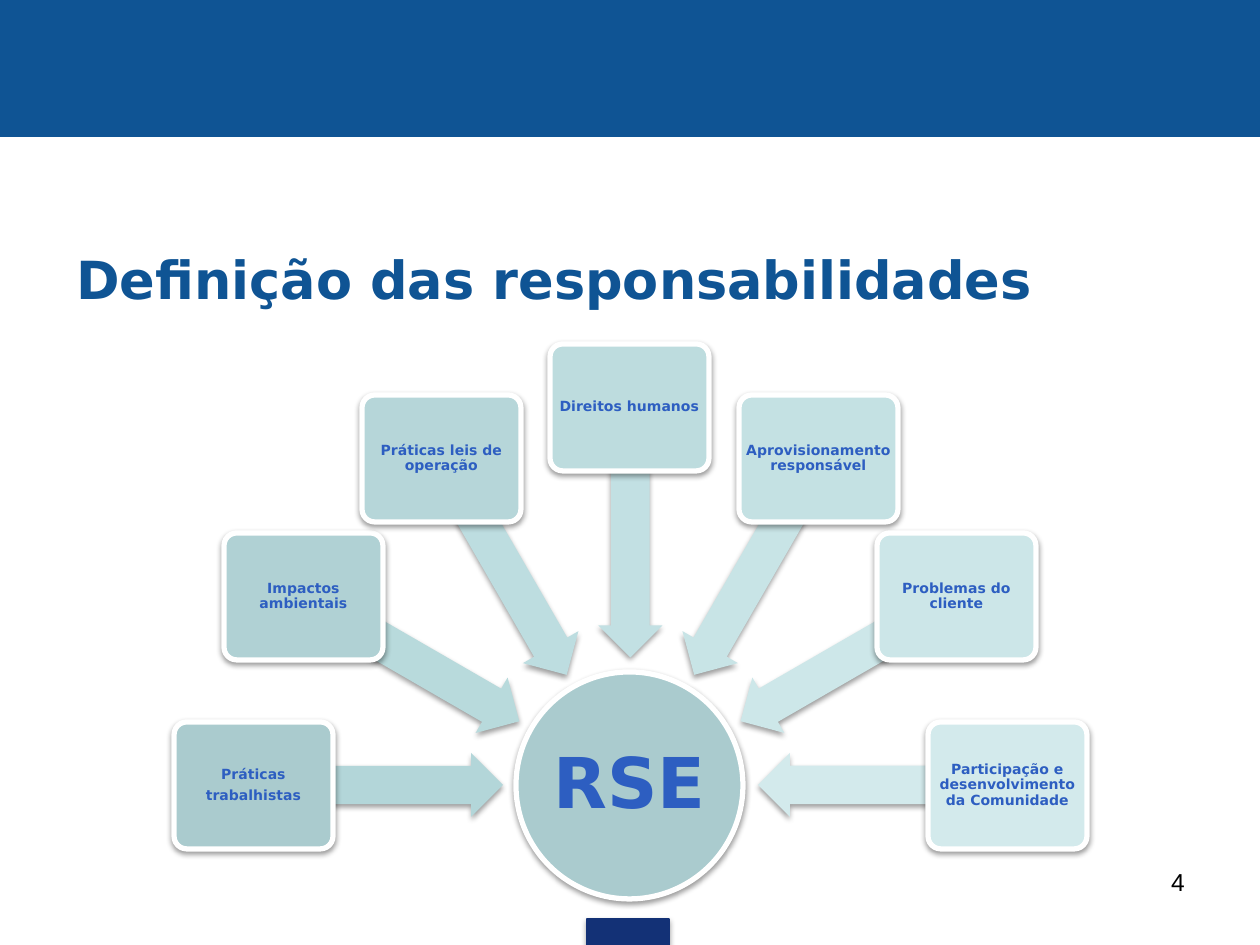
import math

from lxml import etree
from pptx import Presentation
from pptx.dml.color import RGBColor
from pptx.enum.shapes import MSO_SHAPE
from pptx.enum.text import MSO_ANCHOR, PP_ALIGN
from pptx.oxml.ns import qn
from pptx.util import Emu, Pt

PX = 914400 // 126
RECT, OVAL = MSO_SHAPE.RECTANGLE, MSO_SHAPE.OVAL
ROUND, ARROW = MSO_SHAPE.ROUNDED_RECTANGLE, MSO_SHAPE.LEFT_ARROW
TOP, MIDDLE = MSO_ANCHOR.TOP, MSO_ANCHOR.MIDDLE
LEFT, CENTER, RIGHT = PP_ALIGN.LEFT, PP_ALIGN.CENTER, PP_ALIGN.RIGHT

COLORS = {
    "band": "0F5494",
    "mark": "133176",
    "label": "2D5EC1",
    "hub": "AACBCE",
    "white": "FFFFFF",
    "black": "000000",
}

# Label, box colour, arrow colour: clockwise from the left
DUTIES = [
    ("Práticas\ntrabalhistas", "AACBCE", "B3D6D9"),
    ("Impactos ambientais", "B0D1D4", "B8DADC"),
    ("Práticas leis de operação", "B6D6D9", "BDDDE0"),
    ("Direitos humanos", "BDDCDE", "C2E0E3"),
    ("Aprovisionamento responsável", "C4E1E3", "C8E4E6"),
    ("Problemas do cliente", "CCE6E8", "CDE7E9"),
    ("Participação e desenvolvimento da Comunidade", "D3EAEC", "D3EAEC"),
]

HUB_X, HUB_Y, HUB_SIZE = 630, 785, 227
BOX_W, BOX_H, BOX_RADIUS = 159, 127, 377
ARROW_W, ARROW_H, ARROW_RADIUS = 249, 64, 252


def px(n):
    return Emu(round(n) * PX)


def rgb(value):
    return RGBColor.from_string(COLORS.get(value, value))


def add_shadow(s, alpha, dist):
    effects = s._element.spPr.find(qn("a:effectLst"))
    shadow = etree.SubElement(
        effects, qn("a:outerShdw"), blurRad="40000", dist=str(dist),
        dir="5400000", rotWithShape="0")
    color = etree.SubElement(shadow, qn("a:srgbClr"), val=COLORS["black"])
    etree.SubElement(color, qn("a:alpha"), val=str(alpha * 1000))


def add_shape(slide, kind, x, y, w, h, fill, line=None, width=0.75):
    s = slide.shapes.add_shape(kind, px(x), px(y), px(w), px(h))
    s.shadow.inherit = False
    s.fill.solid()
    s.fill.fore_color.rgb = rgb(fill)
    if line:
        s.line.color.rgb = rgb(line)
        s.line.width = Pt(width)
    else:
        s.line.fill.background()
    return s


def add_centered(slide, kind, cx, cy, w, h, fill, line=None):
    s = add_shape(slide, kind, cx - w / 2, cy - h / 2, w, h, fill, line, 3)
    add_shadow(s, 38, 20000)
    return s


def set_text(s, text, size, color, font="DejaVu Sans", bold=True,
             align=CENTER, anchor=MIDDLE, inset=None, spacing=None, after=0):
    tf = s.text_frame
    tf.word_wrap = True
    tf.vertical_anchor = anchor
    if inset is not None:
        tf.margin_left = tf.margin_right = px(inset)
        tf.margin_top = tf.margin_bottom = px(inset)
    for i, line in enumerate(text.split("\n")):
        p = tf.add_paragraph() if i else tf.paragraphs[0]
        p.alignment = align
        p.space_after = Pt(after)
        if spacing:
            p.line_spacing = spacing
        r = p.add_run()
        r.text = line
        r.font.name = font
        r.font.size = Pt(size)
        r.font.bold = bold
        r.font.color.rgb = rgb(color)


def add_text(slide, x, y, w, h, text, **fmt):
    s = slide.shapes.add_textbox(px(x), px(y), px(w), px(h))
    set_text(s, text, **fmt)


def around_hub(angle, radius):
    a = math.radians(angle)
    return HUB_X - radius * math.cos(a), HUB_Y - radius * math.sin(a)


def add_duty(slide, angle, label, box_color, arrow_color):
    arrow = add_centered(slide, ARROW, *around_hub(angle, ARROW_RADIUS),
                         ARROW_W, ARROW_H, arrow_color)
    arrow.adjustments[0] = 0.6
    arrow.adjustments[1] = 0.5
    arrow.rotation = (180 + angle) % 360
    box = add_centered(slide, ROUND, *around_hub(angle, BOX_RADIUS),
                       BOX_W, BOX_H, box_color, "white")
    box.adjustments[0] = 0.1
    set_text(box, label, size=8, color="label", inset=3, spacing=0.9, after=3)


def main():
    prs = Presentation()
    prs.slide_width, prs.slide_height = px(1260), px(945)
    slide = prs.slides.add_slide(prs.slide_layouts[6])

    # Top band and bottom mark
    add_shape(slide, RECT, 0, 0, 1260, 136, "band", "band")
    mark = add_shape(slide, RECT, 587, 919, 82, 26, "mark", "mark")
    add_shadow(mark, 35, 23000)

    # Title
    add_text(slide, 64, 214, 1134, 129, "Definição das responsabilidades",
             size=30, color="band", align=LEFT)

    # Hub with the duties fanned out above it
    hub = add_centered(slide, OVAL, HUB_X, HUB_Y, HUB_SIZE, HUB_SIZE,
                       "hub", "white")
    set_text(hub, "RSE", size=40, color="label", inset=4, spacing=0.9)
    step = 180 / (len(DUTIES) - 1)
    for i, duty in enumerate(DUTIES):
        add_duty(slide, i * step, *duty)

    # Page number
    add_text(slide, 903, 861, 294, 66, "4", size=14, color="black",
             font="Arial", bold=False, align=RIGHT, anchor=TOP)

    prs.save("out.pptx")


if __name__ == "__main__":
    main()
